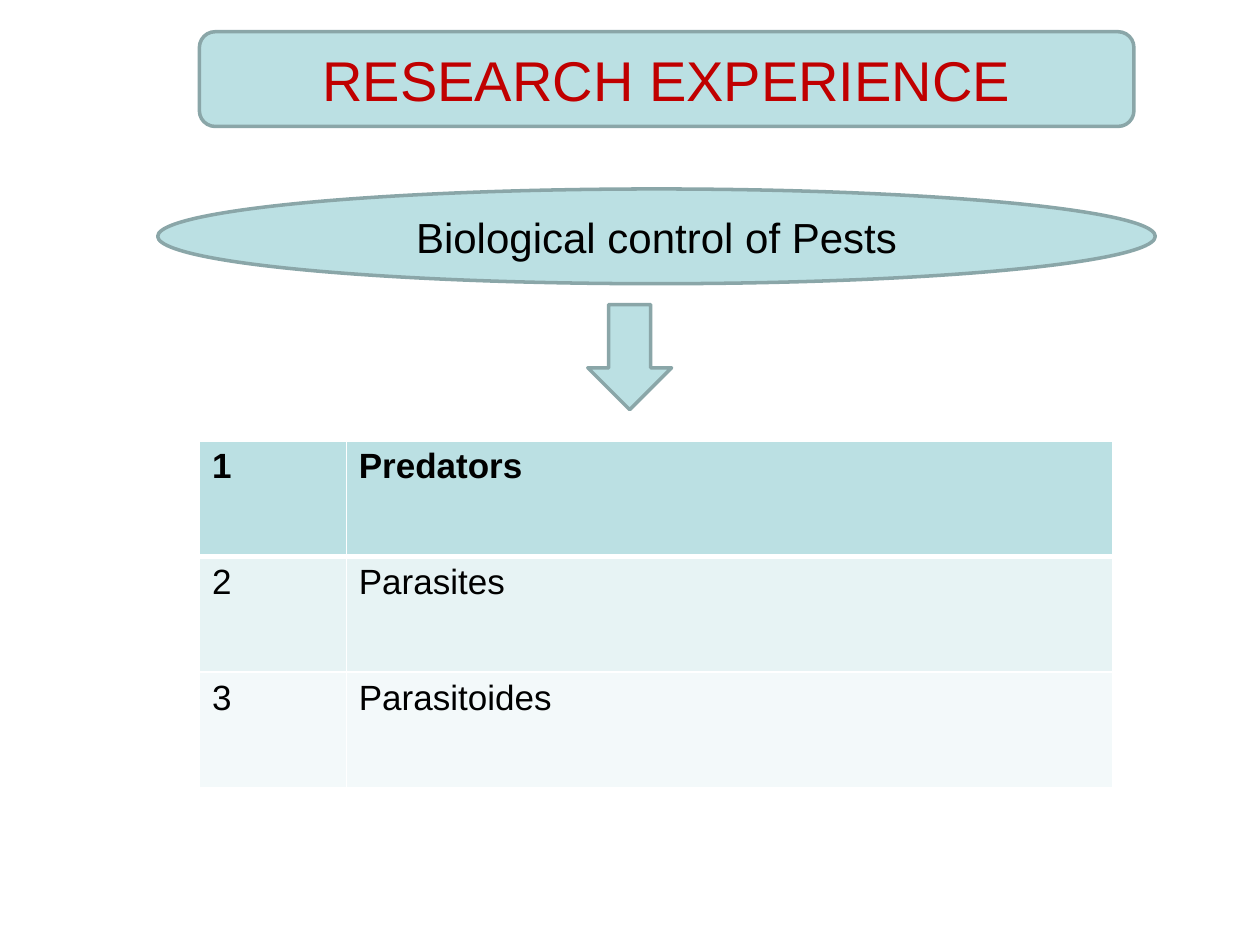
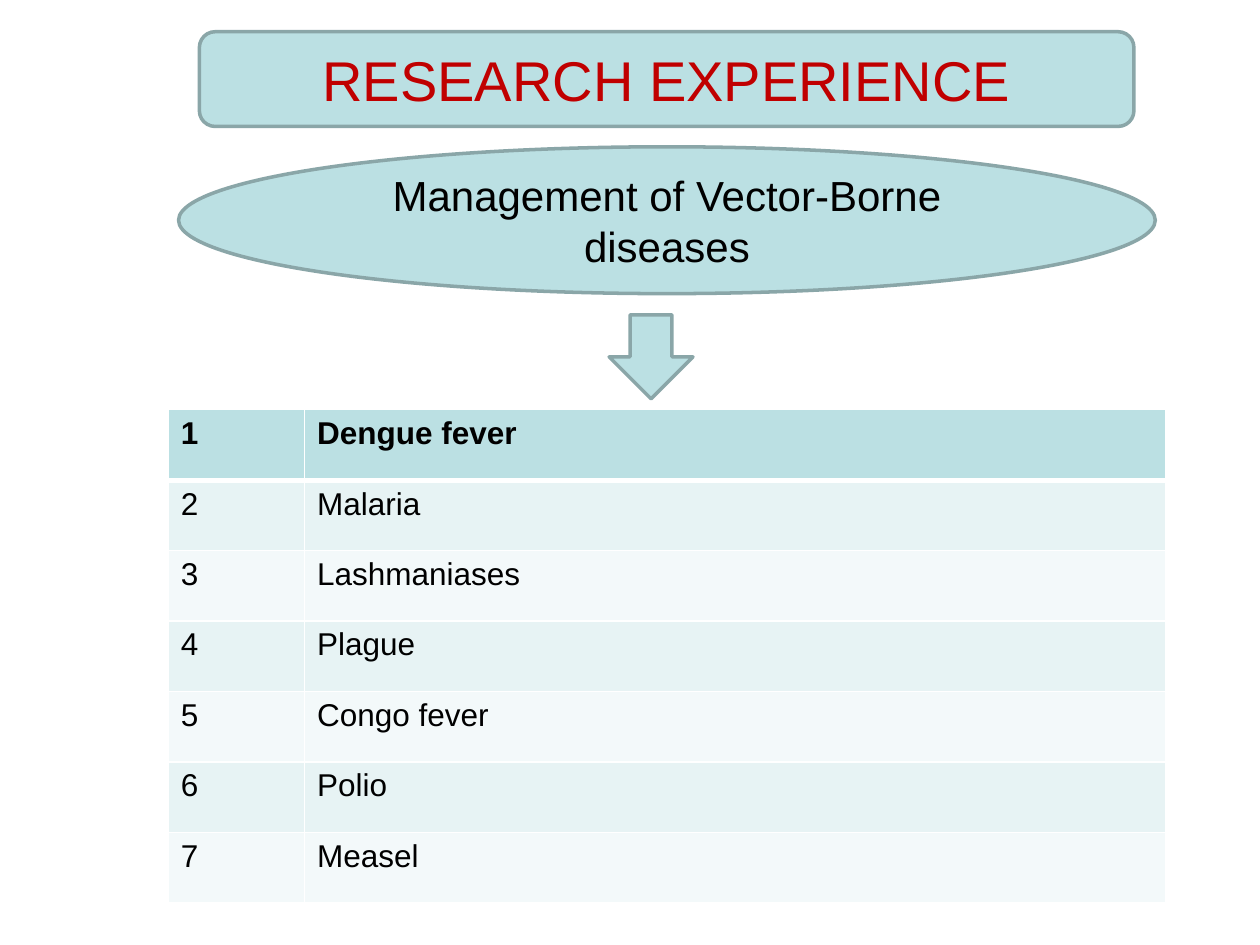
from dataclasses import dataclass

from lxml.etree import SubElement
from pptx import Presentation
from pptx.dml.color import RGBColor
from pptx.enum.shapes import MSO_SHAPE
from pptx.enum.text import MSO_ANCHOR, MSO_AUTO_SIZE, PP_ALIGN
from pptx.oxml.ns import qn
from pptx.shapes.autoshape import Shape
from pptx.slide import Slide
from pptx.table import _Cell
from pptx.text.text import TextFrame, _Paragraph
from pptx.util import Cm, Pt

FONT = "Arial"
COLOURS = {
    "panel": "BBE0E3",
    "outline": "8AA6A8",
    "title": "C00000",
    "text": "000000",
    "border": "FFFFFF",
    "odd_row": "E7F3F4",
    "even_row": "F3F9FA",
}
TITLE_ONLY = 5
TITLE = "RESEARCH EXPERIENCE"


@dataclass(frozen=True)
class Area:
    """A rectangle on the page, in centimetres."""
    left: float
    top: float
    width: float
    height: float

    def lengths(self) -> tuple[Cm, Cm, Cm, Cm]:
        return Cm(self.left), Cm(self.top), Cm(self.width), Cm(self.height)


@dataclass(frozen=True)
class NumberedTable:
    left: float
    top: float
    columns: tuple[float, float]
    row_height: float
    text_size: int
    entries: tuple[str, ...]


@dataclass(frozen=True)
class Topic:
    name: str
    oval: Area
    arrow: Area
    table: NumberedTable


TITLE_AREA = Area(4.02, 0.64, 18.84, 1.91)
TOPICS = (
    Topic(
        "Biological control of Pests",
        Area(3.18, 3.81, 20.11, 1.91),
        Area(11.85, 6.14, 1.69, 2.12),
        NumberedTable(4.02, 8.89, (2.96, 15.45), 2.33, 20,
                      ("Predators", "Parasites", "Parasitoides")),
    ),
    Topic(
        "Management of Vector-Borne diseases",
        Area(3.6, 2.96, 19.69, 2.96),
        Area(12.28, 6.35, 1.69, 1.69),
        NumberedTable(3.39, 8.26, (2.75, 17.36), 1.42, 18,
                      ("Dengue fever", "Malaria", "Lashmaniases", "Plague",
                       "Congo fever", "Polio", "Measel")),
    ),
)


def colour(name: str) -> RGBColor:
    return RGBColor.from_string(COLOURS[name])


def add_span(para: _Paragraph, text: str, size: int, ink: str = "text",
             bold: bool = False) -> None:
    span = para.add_run()
    span.text = text
    span.font.name = FONT
    span.font.size = Pt(size)
    span.font.bold = bold
    span.font.color.rgb = colour(ink)


def write_centred(frame: TextFrame, text: str, size: int, ink: str = "text") -> None:
    frame.word_wrap = True
    frame.auto_size = MSO_AUTO_SIZE.NONE
    frame.vertical_anchor = MSO_ANCHOR.MIDDLE
    para = frame.paragraphs[0]
    para.alignment = PP_ALIGN.CENTER
    add_span(para, text, size, ink)


def add_panel(page: Slide, kind: MSO_SHAPE, area: Area) -> Shape:
    panel = page.shapes.add_shape(kind, *area.lengths())
    panel.shadow.inherit = False
    panel.fill.solid()
    panel.fill.fore_color.rgb = colour("panel")
    panel.line.color.rgb = colour("outline")
    panel.line.width = Pt(2)
    return panel


def add_title(page: Slide) -> None:
    band = add_panel(page, MSO_SHAPE.ROUNDED_RECTANGLE, TITLE_AREA)
    title = page.shapes.title
    title.left, title.top, title.width, title.height = TITLE_AREA.lengths()
    write_centred(title.text_frame, TITLE, 32, "title")
    # The title sits in front of its band
    band.element.addnext(title.element)


def set_borders(cell: _Cell, top: int, bottom: int) -> None:
    properties = cell._tc.get_or_add_tcPr()
    for side, points in (("L", 1), ("R", 1), ("T", top), ("B", bottom)):
        line = SubElement(properties, qn(f"a:ln{side}"), w=str(Pt(points)))
        fill = SubElement(line, qn("a:solidFill"))
        SubElement(fill, qn("a:srgbClr"), val=COLOURS["border"])


def add_numbered_table(page: Slide, spec: NumberedTable) -> None:
    count = len(spec.entries)
    area = Area(spec.left, spec.top, sum(spec.columns), count * spec.row_height)
    table = page.shapes.add_table(count, len(spec.columns), *area.lengths()).table
    for column, width in zip(table.columns, spec.columns):
        column.width = Cm(width)
    for index, entry in enumerate(spec.entries):
        table.rows[index].height = Cm(spec.row_height)
        heading = index == 0
        fill = "panel" if heading else "odd_row" if index % 2 else "even_row"
        for cell, text in zip(table.rows[index].cells, (str(index + 1), entry)):
            # A thick rule parts the first row from the rest
            set_borders(cell, top=3 if index == 1 else 1, bottom=3 if heading else 1)
            cell.fill.solid()
            cell.fill.fore_color.rgb = colour(fill)
            add_span(cell.text_frame.paragraphs[0], text, spec.text_size, bold=heading)


def add_topic_page(deck: Presentation, topic: Topic) -> None:
    page = deck.slides.add_slide(deck.slide_layouts[TITLE_ONLY])
    add_title(page)
    oval = add_panel(page, MSO_SHAPE.OVAL, topic.oval)
    write_centred(oval.text_frame, topic.name, 24)
    add_panel(page, MSO_SHAPE.DOWN_ARROW, topic.arrow)
    add_numbered_table(page, topic.table)


def main() -> None:
    deck = Presentation()
    deck.slide_width, deck.slide_height = Cm(25.4), Cm(19.05)
    for topic in TOPICS:
        add_topic_page(deck, topic)
    deck.save("out.pptx")


if __name__ == "__main__":
    main()
